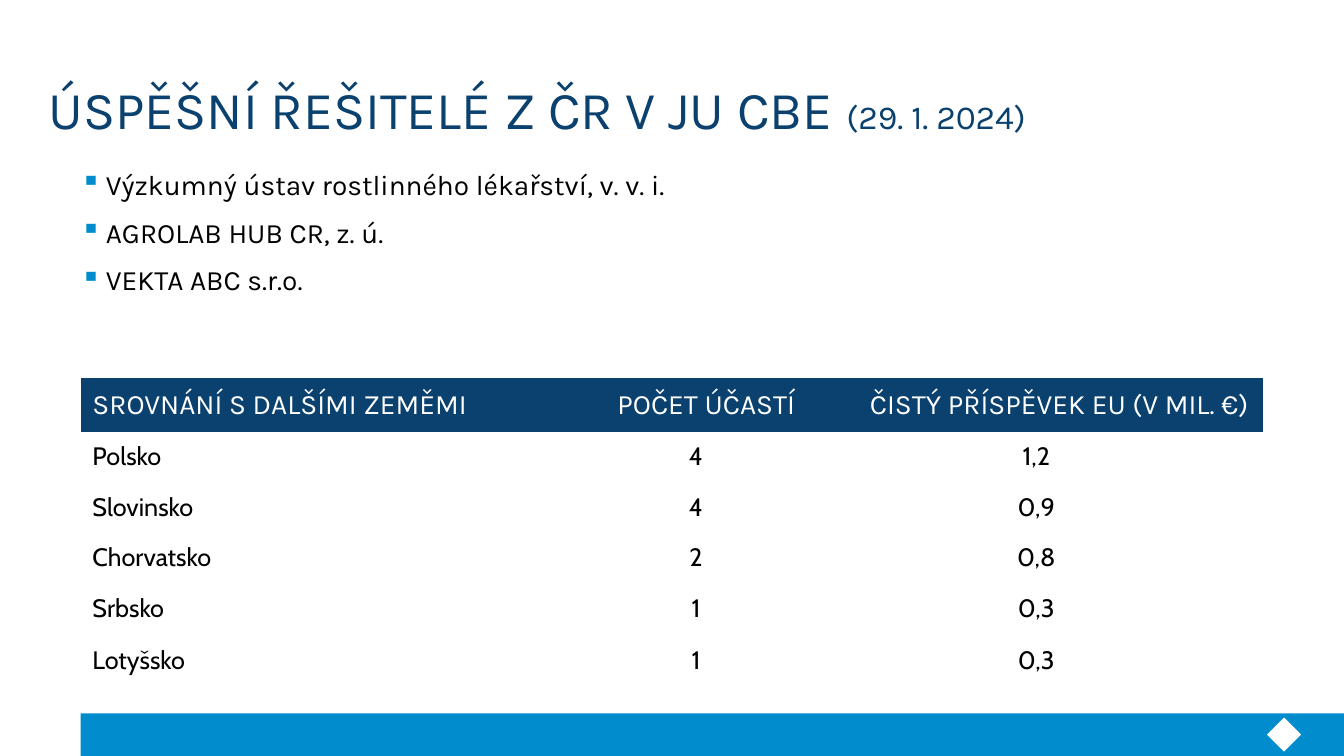
from lxml.etree import SubElement
from pptx import Presentation
from pptx.dml.color import RGBColor
from pptx.enum.shapes import MSO_SHAPE as SHAPE
from pptx.enum.text import MSO_ANCHOR as ANCHOR, PP_ALIGN as ALIGN
from pptx.oxml.ns import qn
from pptx.util import Cm, Pt

NAVY, BLUE, WHITE, BLACK = "0A416E", "008CCD", "FFFFFF", "000000"
LIGHT_RULE, DARK_RULE = ("BFBFBF", 0.75), ("9B9BA0", 0.5)


def rgb(value):
    return RGBColor.from_string(value)


class SlideBuilder:
    heading_font = "Karla"
    table_font = "Cabin"

    def __init__(self, prs):
        self.s = prs.slides.add_slide(prs.slide_layouts[6])

    def run(self, p, text, size, color, font):
        r = p.add_run()
        r.text = text
        r.font.size, r.font.name = Pt(size), font
        r.font.color.rgb = rgb(color)

    def shape(self, kind, box, color):
        sp = self.s.shapes.add_shape(kind, *map(Cm, box))
        sp.shadow.inherit = False
        sp.fill.solid()
        sp.fill.fore_color.rgb = rgb(color)
        sp.line.fill.background()

    def frame(self, box, anchor):
        tf = self.s.shapes.add_textbox(*map(Cm, box)).text_frame
        tf.word_wrap = True
        tf.vertical_anchor = anchor
        tf.margin_left = tf.margin_right = tf.margin_top = tf.margin_bottom = 0
        return tf

    def title(self, box, parts):
        p = self.frame(box, ANCHOR.BOTTOM).paragraphs[0]
        p.line_spacing = 0.85
        for text, size in parts:
            self.run(p, text, size, NAVY, self.heading_font)

    def bullets(self, box, items):
        tf = self.frame(box, ANCHOR.TOP)
        for i, item in enumerate(items):
            p = tf.add_paragraph() if i else tf.paragraphs[0]
            p.space_before = Pt(10)
            pPr = p._p.get_or_add_pPr()
            pPr.set("marL", str(Cm(0.64)))
            pPr.set("indent", str(-Cm(0.64)))
            color = SubElement(pPr, qn("a:buClr"))
            SubElement(color, qn("a:srgbClr"), val=BLUE)
            SubElement(pPr, qn("a:buChar"), char="▪")
            self.run(p, item, 20, BLACK, self.heading_font)

    def borders(self, cell, rule):
        tcPr = cell._tc.get_or_add_tcPr()
        for side in ("lnL", "lnR", "lnT", "lnB"):
            ln = SubElement(tcPr, qn(f"a:{side}"))
            if side == "lnB" and rule:
                color, width = rule
                ln.set("w", str(Pt(width)))
                fill = SubElement(ln, qn("a:solidFill"))
                SubElement(fill, qn("a:srgbClr"), val=color)
            else:
                SubElement(ln, qn("a:noFill"))

    def cell(self, cell, text, align, left, rule, header):
        self.borders(cell, rule)
        if header:
            cell.fill.solid()
            cell.fill.fore_color.rgb = rgb(NAVY)
        else:
            cell.fill.background()
        cell.vertical_anchor = ANCHOR.MIDDLE
        cell.margin_left, cell.margin_right = Cm(left), Cm(0.36)
        cell.margin_top = cell.margin_bottom = Cm(0.18)
        p = cell.text_frame.paragraphs[0]
        p.alignment = align
        style = (20, WHITE, self.heading_font) if header else (18, BLACK, self.table_font)
        self.run(p, text, *style)

    def table(self, left, top, widths, heights, rows, rules):
        box = map(Cm, (left, top, sum(widths), sum(heights)))
        tbl = self.s.shapes.add_table(len(rows), len(widths), *box).table
        tbl.first_row = tbl.horz_banding = False
        for column, width in zip(tbl.columns, widths):
            column.width = Cm(width)
        for i, (values, height, rule) in enumerate(zip(rows, heights, rules)):
            tbl.rows[i].height = Cm(height)
            for j, text in enumerate(values):
                number_align = ALIGN.CENTER if i else ALIGN.RIGHT
                align, inset = (number_align, 0.36) if j else (ALIGN.LEFT, 0.3)
                self.cell(tbl.cell(i, j), text, align, inset, rule, i == 0)


def main():
    prs = Presentation()
    prs.slide_width, prs.slide_height = Cm(33.87), Cm(19.05)
    slide = SlideBuilder(prs)
    slide.shape(SHAPE.RECTANGLE, (2.03, 17.98, 31.84, 1.07), BLUE)
    slide.shape(SHAPE.DIAMOND, (31.93, 18.08, 0.86, 0.86), WHITE)
    slide.title((1.22, 2.16, 30.63, 1.37), [
        ("ÚSPĚŠNÍ ŘEŠITELÉ Z ČR V JU CBE ", 38),
        ("(29. 1. 2024)", 24),
    ])
    slide.bullets((2.03, 4.22, 29.85, 3.73), [
        "Výzkumný ústav rostlinného lékařství, v. v. i.",
        "AGROLAB HUB CR, z. ú.",
        "VEKTA ABC s.r.o.",
    ])
    rows = [
        ("SROVNÁNÍ S DALŠÍMI ZEMĚMI", "POČET ÚČASTÍ", "ČISTÝ PŘÍSPĚVEK EU (V MIL. €)"),
        ("Polsko", "4", "1,2"),
        ("Slovinsko", "4", "0,9"),
        ("Chorvatsko", "2", "0,8"),
        ("Srbsko", "1", "0,3"),
        ("Lotyšsko", "1", "0,3"),
    ]
    heights = [1.35] + [1.27] * 4 + [1.35]
    rules = [None] + [LIGHT_RULE] * 3 + [DARK_RULE, None]
    slide.table(2.03, 9.53, (12.65, 5.72, 11.43), heights, rows, rules)
    prs.save("out.pptx")


if __name__ == "__main__":
    main()
